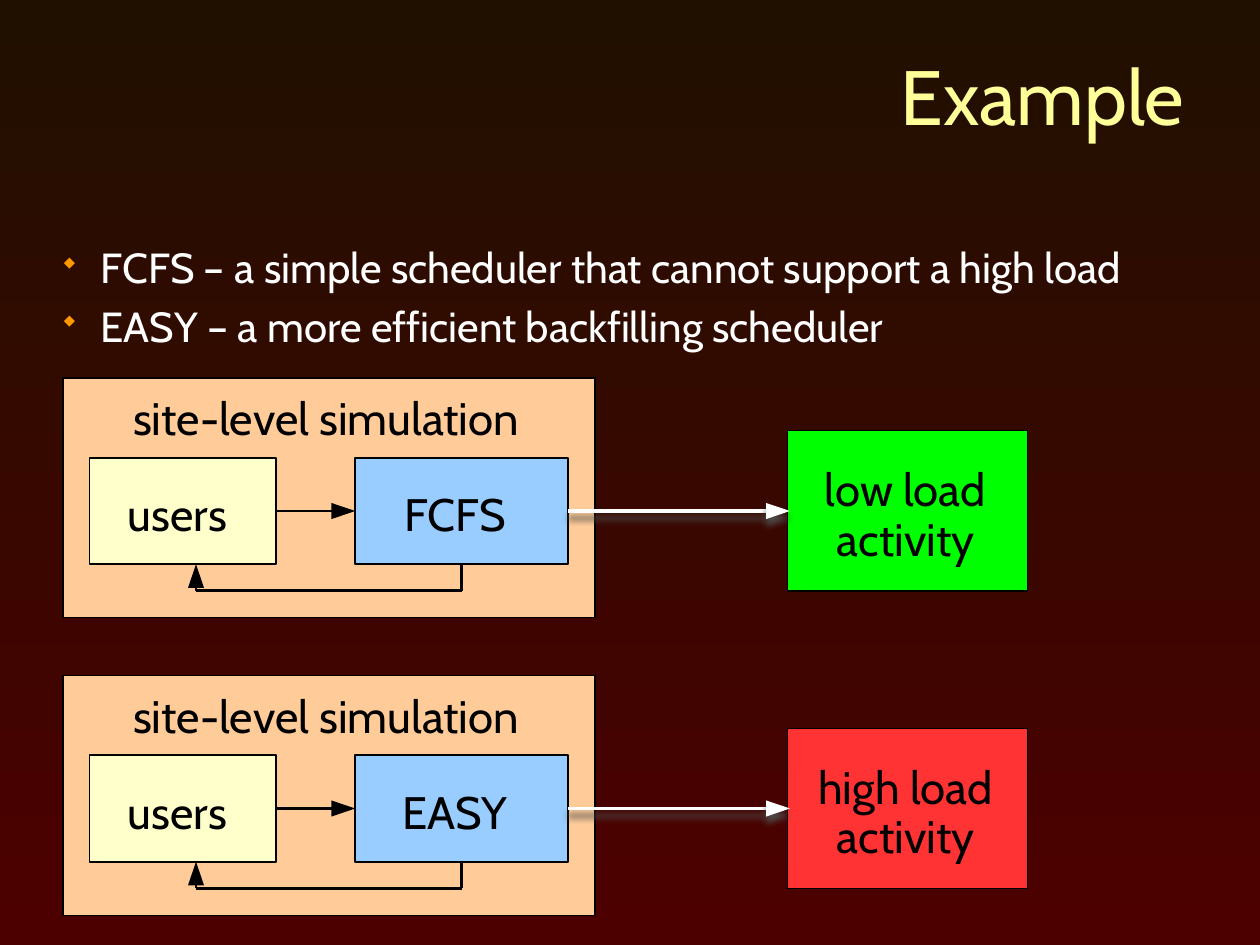
"""Build the slide that compares the FCFS and EASY scheduler simulations."""
from lxml.etree import SubElement
from pptx import Presentation
from pptx.dml.color import RGBColor
from pptx.enum.shapes import MSO_CONNECTOR as Connector, MSO_SHAPE as Shape
from pptx.enum.text import MSO_ANCHOR as Anchor, PP_ALIGN as Align
from pptx.oxml.ns import qn
from pptx.util import Pt

FONT = "Cabin"
BLACK = RGBColor(0x00, 0x00, 0x00)
WHITE = RGBColor(0xFF, 0xFF, 0xFF)
TITLE_YELLOW = RGBColor(0xFF, 0xFF, 0x99)
BROWN = RGBColor(0x20, 0x10, 0x00)
MAROON = RGBColor(0x4D, 0x00, 0x00)
ORANGE = RGBColor(0xFF, 0x99, 0x00)
PEACH = RGBColor(0xFF, 0xCC, 0x99)
CREAM = RGBColor(0xFF, 0xFF, 0xCC)
BLUE = RGBColor(0x99, 0xCC, 0xFF)
GREEN = RGBColor(0x00, 0xFF, 0x00)
RED = RGBColor(0xFF, 0x33, 0x33)
SHADOW_GRAY = RGBColor(0x4D, 0x4D, 0x4D)

presentation = Presentation()
presentation.slide_width, presentation.slide_height = Pt(720), Pt(540)
slide = presentation.slides.add_slide(presentation.slide_layouts[6])
shapes = slide.shapes


def add_box(place, color, lines, border=0, anchor=Anchor.MIDDLE, inset=3, right=0):
    box = shapes.add_shape(Shape.RECTANGLE, *map(Pt, place))
    box.shadow.inherit = False
    box.fill.solid()
    box.fill.fore_color.rgb = color
    box.line.color.rgb = BLACK
    box.line.width = Pt(border)
    frame = box.text_frame
    frame.margin_left = frame.margin_bottom = 0
    frame.margin_top, frame.margin_right = Pt(inset), Pt(right)
    frame.vertical_anchor = anchor
    frame.text = "\n".join(lines)
    for paragraph in frame.paragraphs:
        paragraph.alignment = Align.CENTER
        paragraph.font.name, paragraph.font.size = FONT, Pt(26)
        paragraph.font.color.rgb = BLACK
        if len(lines) > 1:
            paragraph.line_spacing = Pt(28.4)
    return box


def add_effects(shape, color):
    properties = shape._element.spPr
    effects = SubElement(properties, qn("a:effectLst"))
    if color == WHITE:
        shadow = SubElement(
            effects, qn("a:outerShdw"),
            blurRad=str(Pt(4)), dist=str(Pt(4)), dir="5400000", rotWithShape="0",
        )
        SubElement(shadow, qn("a:srgbClr"), val=str(SHADOW_GRAY))


background = slide.background.fill
background.gradient()
background.gradient_angle = 270
for stop, color in zip(background.gradient_stops, (BROWN, MAROON)):
    stop.color.rgb = color

title = shapes.add_textbox(Pt(36), Pt(18), Pt(648), Pt(72)).text_frame
title.word_wrap = True
title.vertical_anchor = Anchor.MIDDLE
title.text = "Example"
paragraph = title.paragraphs[0]
paragraph.alignment = Align.RIGHT
paragraph.font.name, paragraph.font.size = FONT, Pt(44)
paragraph.font.color.rgb = TITLE_YELLOW

body = shapes.add_textbox(Pt(18), Pt(134.4), Pt(678), Pt(76)).text_frame
body.word_wrap = True
body.text = (
    "FCFS – a simple scheduler that cannot support a high load\n"
    "EASY – a more efficient backfilling scheduler"
)
for paragraph in body.paragraphs:
    paragraph.space_after = Pt(4.8)
    paragraph.font.name, paragraph.font.size = FONT, Pt(24)
    paragraph.font.color.rgb = WHITE
    properties = paragraph._p.get_or_add_pPr()
    properties.set("marL", str(Pt(32.4)))
    properties.set("indent", str(Pt(-22.3)))
    bullet_color = SubElement(properties, qn("a:buClr"))
    SubElement(bullet_color, qn("a:srgbClr"), val=str(ORANGE))
    SubElement(properties, qn("a:buSzPct"), val="65000")
    SubElement(properties, qn("a:buFont"), typeface="Wingdings", charset="2")
    SubElement(properties, qn("a:buChar"), char="w")
    properties.append(properties.find(qn("a:defRPr")))

rows = (
    (216, "FCFS", "low load", GREEN),
    (386, "EASY", "high load", RED),
)
for top, scheduler_name, load, load_color in rows:
    box_top = top + 45.6
    middle = box_top + 30.4
    bottom = box_top + 60.8
    loop = bottom + 15.2
    add_box((36, top, 304, 137), PEACH, ["site-level simulation"],
            anchor=Anchor.TOP, inset=7, right=3)
    scheduler = add_box((203, box_top, 121.6, 60.8), BLUE, [scheduler_name], 1, right=7.5)
    users = add_box((51.2, box_top, 106.4, 60.8), CREAM, ["users"], 1, right=6)
    add_box((450, top + 30.2, 137, 91.6), load_color, [load, "activity"], inset=5.5, right=2)

    segments = (
        (users, 3, (157.6, middle), (192, middle), BLACK, 1.5),
        (scheduler, 2, (263.8, bottom), (263.8, loop), BLACK, 1.5),
        (None, 0, (263.8, loop), (112, loop), BLACK, 1.5),
        (None, 0, (112, loop), (112, bottom + 11), BLACK, 1.5),
        (scheduler, 3, (324.6, middle), (438, middle), WHITE, 2),
    )
    for source, side, start, end, color, width in segments:
        segment = shapes.add_connector(Connector.STRAIGHT, *map(Pt, start + end))
        if source is not None:
            segment.begin_connect(source, side)
        segment.line.color.rgb = color
        segment.line.width = Pt(width)
        add_effects(segment, color)

    arrowheads = (
        ((203, middle), (189.4, middle + 4.6), (189.4, middle - 4.6), BLACK),
        ((112, bottom), (116.6, bottom + 13.6), (107.4, bottom + 13.6), BLACK),
        ((451.4, middle), (437.8, middle + 4.6), (437.8, middle - 4.6), WHITE),
    )
    for tip, *base, color in arrowheads:
        builder = shapes.build_freeform(*map(Pt, tip))
        builder.add_line_segments([(Pt(x), Pt(y)) for x, y in base], close=True)
        arrowhead = builder.convert_to_shape()
        arrowhead.fill.solid()
        arrowhead.fill.fore_color.rgb = color
        arrowhead.line.fill.background()
        add_effects(arrowhead, color)

presentation.save("out.pptx")
